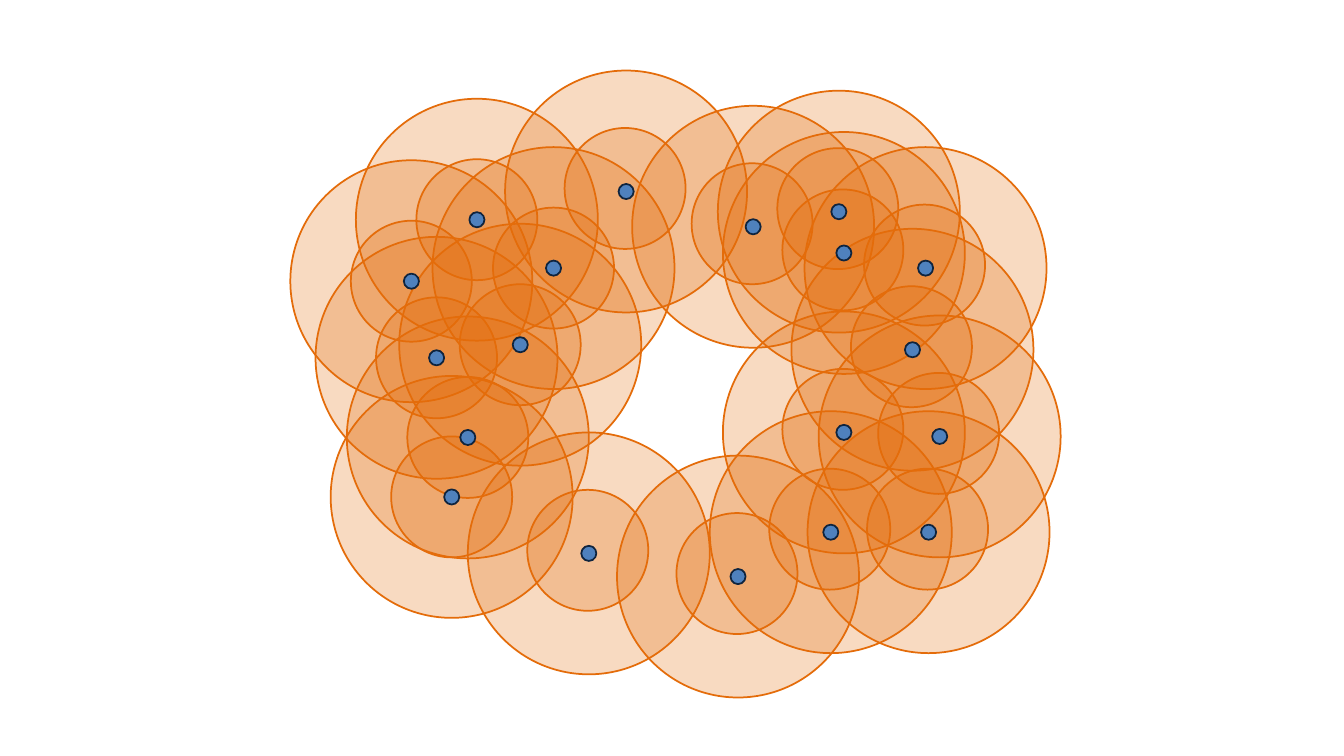
"""Builds a slide of sensor nodes, each inside an inner and an outer range circle."""
from lxml import etree
from pptx import Presentation
from pptx.dml.color import RGBColor
from pptx.enum.shapes import MSO_SHAPE
from pptx.oxml.ns import qn
from pptx.util import Inches, Pt

OVAL = MSO_SHAPE.OVAL
ORANGE = RGBColor(0xE4, 0x6C, 0x0A)
BLUE = RGBColor(0x4F, 0x81, 0xBD)
NAVY = RGBColor(0x0F, 0x24, 0x3E)

BLANK_LAYOUT = 6
INNER_DIAMETER = 1.2
OUTER_DIAMETER = 2 * INNER_DIAMETER
NODE_DIAMETER = 0.15
RANGE_OPACITY = 25
RIGHT_GROUP_START = 5.5
RIGHT_INNER_SHIFT = (-0.01, -0.03)

NODE_CENTERS = [
    (4.08, 2.79), (5.49, 2.66), (6.21, 1.90), (7.47, 2.25), (8.32, 2.10),
    (9.32, 4.33), (8.24, 5.28), (7.32, 5.72), (5.84, 5.49), (4.48, 4.93),
    (4.33, 3.55), (8.37, 4.29), (4.64, 4.34), (9.05, 3.47), (8.37, 2.51),
    (9.21, 5.28), (5.16, 3.42), (4.73, 2.18), (9.18, 2.66),
]

presentation = Presentation()
presentation.slide_width = Inches(13.33)
presentation.slide_height = Inches(7.5)
slide = presentation.slides.add_slide(presentation.slide_layouts[BLANK_LAYOUT])


def add_circle(center_x, center_y, diameter, fill_color, line_color, opacity=100):
    shape = slide.shapes.add_shape(
        OVAL,
        Inches(center_x - diameter / 2),
        Inches(center_y - diameter / 2),
        Inches(diameter),
        Inches(diameter),
    )
    shape.shadow.inherit = False
    shape.fill.solid()
    shape.fill.fore_color.rgb = fill_color
    shape.line.color.rgb = line_color
    shape.line.width = Pt(1.25)
    if opacity < 100:
        color = shape.element.spPr.find(qn("a:solidFill")).find(qn("a:srgbClr"))
        etree.SubElement(color, qn("a:alpha")).set("val", str(opacity * 1000))


for x, y in NODE_CENTERS:
    shift_x, shift_y = RIGHT_INNER_SHIFT if x > RIGHT_GROUP_START else (0, 0)
    add_circle(x + shift_x, y + shift_y, INNER_DIAMETER, ORANGE, ORANGE, RANGE_OPACITY)

for x, y in NODE_CENTERS:
    add_circle(x, y, OUTER_DIAMETER, ORANGE, ORANGE, RANGE_OPACITY)

for x, y in NODE_CENTERS:
    add_circle(x, y, NODE_DIAMETER, BLUE, NAVY)

presentation.save("out.pptx")
